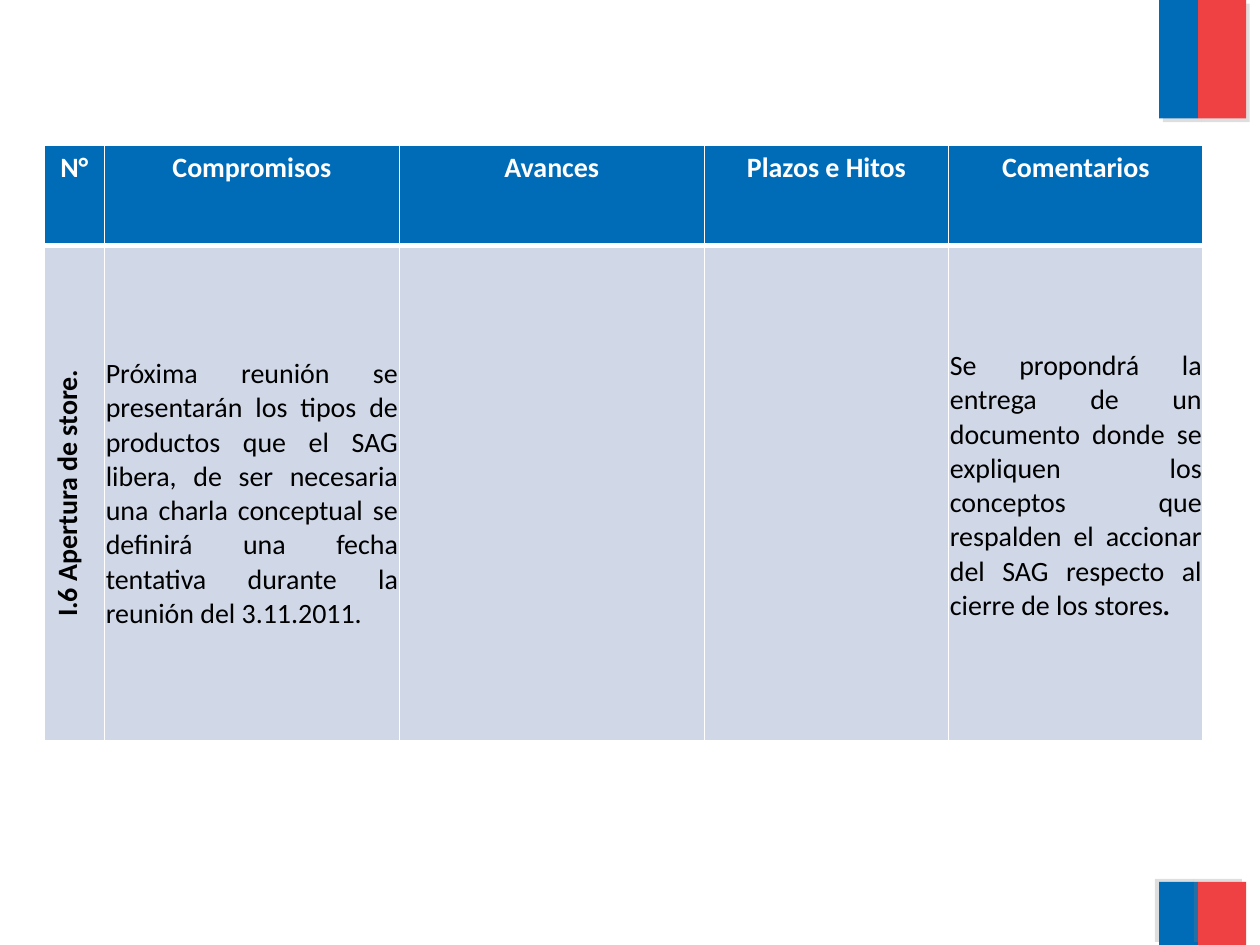
"""Build the commitments table slide with its corner colour bands."""
from lxml import etree
from pptx import Presentation
from pptx.dml.color import RGBColor
from pptx.enum import shapes, text
from pptx.oxml import parse_xml
from pptx.oxml.ns import nsdecls, qn
from pptx.util import Inches, Pt

THEME = dict(font="Calibri", size=16, blue="006CB7", red="EF4144",
             pale="D0D8E8", white="FFFFFF", black="000000", shade="808080")

HEADS = ["N°", "Compromisos", "Avances", "Plazos e Hitos", "Comentarios"]
BODY = [
    ["I.6 Apertura de store."],
    ["Próxima reunión se presentarán los tipos de productos que el SAG libera, "
     "de ser necesaria una charla conceptual se definirá una fecha tentativa "
     "durante la reunión del 3.11.2011."],
    [],
    [],
    ["Se propondrá la entrega de un documento donde se expliquen los conceptos "
     "que respalden el accionar del SAG respecto al cierre de los stores", "."],
]
COLS = [0.48, 2.34, 2.42, 1.94, 2.02]
ROWS = [0.8, 3.93]
PLACE = (0.35, 1.15)
BANDS = [(9.2, 0.31, "blue"), (9.51, 0.38, "red")]
ENDS = [(0, 0.94, 45), (7, 0.5, 215)]


def color(key):
    return RGBColor.from_string(THEME[key])


def band(slide, box, key, angle):
    bar = slide.shapes.add_shape(shapes.MSO_SHAPE.RECTANGLE, *map(Inches, box))
    bar.fill.solid()
    bar.fill.fore_color.rgb = color(key)
    bar.line.fill.background()
    bar.shadow.inherit = False
    glow = bar._element.spPr.find(qn("a:effectLst"))
    glow.append(parse_xml(
        f'<a:outerShdw {nsdecls("a")} blurRad="0" dist="{Pt(3)}" '
        f'dir="{angle * 60000}" algn="ctr" rotWithShape="0">'
        f'<a:srgbClr val="{THEME["shade"]}"><a:alpha val="25000"/></a:srgbClr>'
        '</a:outerShdw>'))


def edge(cell, widths):
    props = cell._tc.get_or_add_tcPr()
    for spot, (side, width) in enumerate(zip("LRTB", widths)):
        line = etree.Element(qn(f"a:ln{side}"), w=str(Pt(width)))
        fill = etree.SubElement(line, qn("a:solidFill"))
        etree.SubElement(fill, qn("a:srgbClr"), val=THEME["white"])
        props.insert(spot, line)


def write(cell, parts, fill, ink, align, bold):
    para = cell.text_frame.paragraphs[0]
    para.alignment = align
    para.font.size = Pt(THEME["size"])
    for part in parts:
        run = para.add_run()
        run.text = part
        font = run.font
        font.name, font.size, font.bold = THEME["font"], Pt(THEME["size"]), bold
        font.color.rgb = color(ink)
    cell.fill.solid()
    cell.fill.fore_color.rgb = color(fill)


def inset(cell, top):
    cell.margin_left = cell.margin_right = Inches(0.01)
    cell.margin_top, cell.margin_bottom = Inches(top), 0


def grid(slide):
    size = (sum(COLS), sum(ROWS))
    table = slide.shapes.add_table(
        len(ROWS), len(COLS), *map(Inches, PLACE + size)).table
    for col, width in zip(table.columns, COLS):
        col.width = Inches(width)
    for row, height in zip(table.rows, ROWS):
        row.height = Inches(height)
    center, justify = text.PP_ALIGN.CENTER, text.PP_ALIGN.JUSTIFY
    for i, (head, parts) in enumerate(zip(HEADS, BODY)):
        top, low = table.cell(0, i), table.cell(1, i)
        write(top, [head], "blue", "white", center, True)
        write(low, parts, "pale", "black", justify if i else center, i == 0)
        edge(top, (1, 1, 1, 3))
        edge(low, (1, 1, 3, 1))
    side, pact, note = (table.cell(1, i) for i in (0, 1, 4))
    side._tc.get_or_add_tcPr().set("vert", "vert270")
    inset(pact, 0.01)
    pact.vertical_anchor = text.MSO_ANCHOR.MIDDLE
    inset(note, 0.82)
    stop = note.text_frame.paragraphs[0].runs[-1].font
    stop.bold = stop.italic = True


def main():
    deck = Presentation()
    deck.slide_width, deck.slide_height = Inches(10), Inches(7.5)
    slide = deck.slides.add_slide(deck.slide_layouts[6])
    for top, high, angle in ENDS:
        for left, wide, key in BANDS:
            band(slide, (left, top, wide, high), key, angle)
    grid(slide)
    deck.save("out.pptx")


if __name__ == "__main__":
    main()
